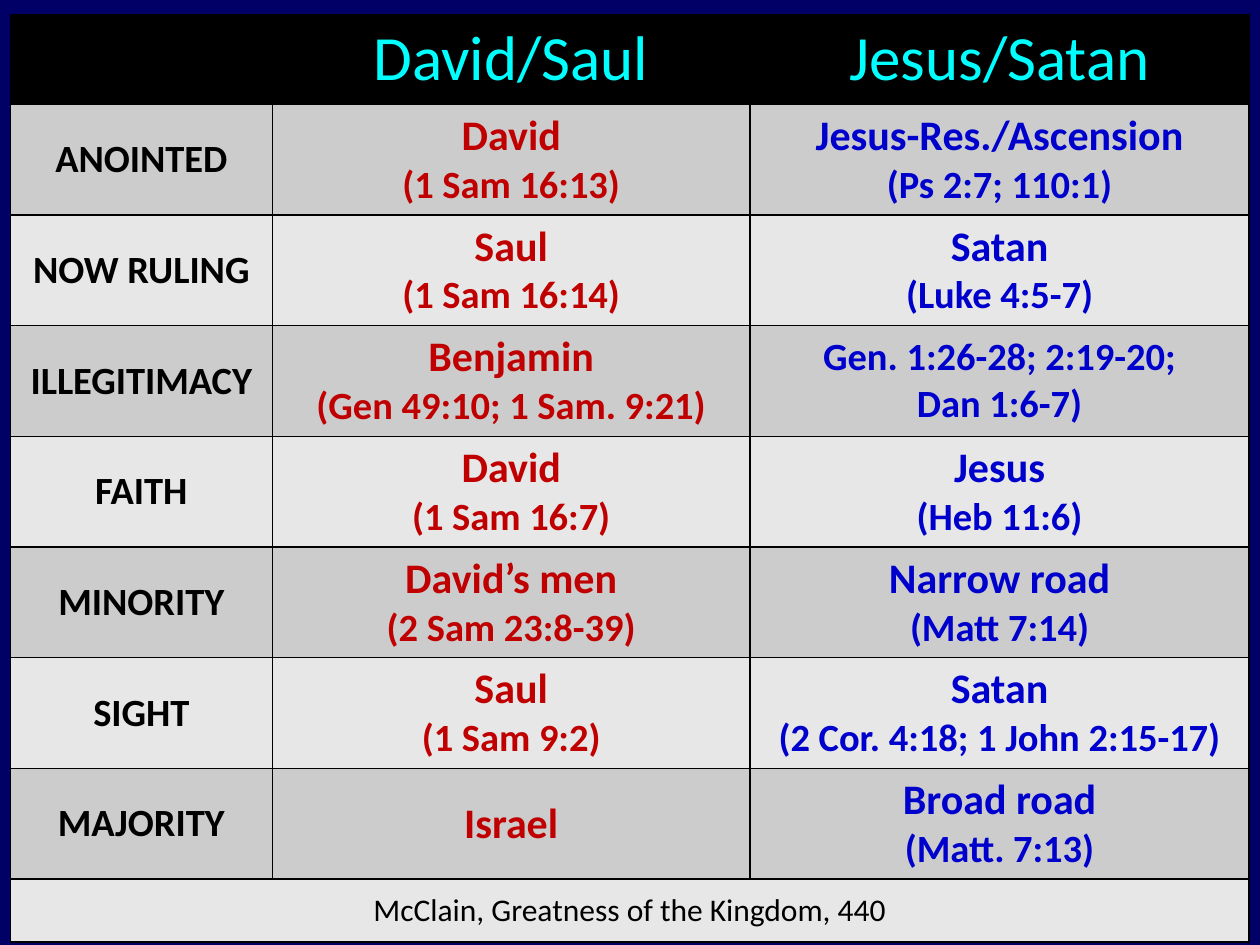
from dataclasses import dataclass

from lxml import etree
from pptx import Presentation
from pptx import util as u
from pptx.dml.color import RGBColor
from pptx.enum import text
from pptx.oxml.ns import qn


@dataclass(frozen=True)
class Theme:
    font: str = "Calibri"
    page: str = "000066"
    black: str = "000000"
    heading: str = "00FFFF"
    bands: tuple = ("CCCCCC", "E7E7E7")
    columns: tuple = ("000000", "C00000", "0000CC")
    heading_size: int = 36
    name_size: int = 24
    label_size: int = 22
    source_size: int = 18


theme = Theme()


def fill_cell(cell, fill, lines=(), color=theme.black, bold=True):
    """Style a cell and write its lines, given as (wording, size) pairs."""
    cell.vertical_anchor = text.MSO_ANCHOR.MIDDLE
    cell.fill.solid()
    cell.fill.fore_color.rgb = RGBColor.from_string(fill)

    # Borders come before the fill in the cell properties
    properties = cell._tc.get_or_add_tcPr()
    for place, side in enumerate(("lnL", "lnR", "lnT", "lnB")):
        border = etree.Element(qn(f"a:{side}"), w=str(u.Pt(1)))
        solid = etree.SubElement(border, qn("a:solidFill"))
        etree.SubElement(solid, qn("a:srgbClr"), val=theme.black)
        properties.insert(place, border)

    for index, (wording, size) in enumerate(lines):
        frame = cell.text_frame
        para = frame.paragraphs[0] if index == 0 else frame.add_paragraph()
        para.text = wording
        para.alignment = text.PP_ALIGN.CENTER
        para.font.name = theme.font
        para.font.size = u.Pt(size)
        para.font.bold = bold
        para.font.color.rgb = RGBColor.from_string(color)


headings = ("", "David/Saul", "Jesus/Satan")
# Label, then the name and reference for each column
comparisons = (
    ("ANOINTED", ("David", "(1 Sam 16:13)"), ("Jesus-Res./Ascension", "(Ps 2:7; 110:1)")),
    ("NOW RULING", ("Saul", "(1 Sam 16:14)"), ("Satan", "(Luke 4:5-7)")),
    ("ILLEGITIMACY", ("Benjamin", "(Gen 49:10; 1 Sam. 9:21)"),
     ("Gen. 1:26-28; 2:19-20;", "Dan 1:6-7)")),
    ("FAITH", ("David", "(1 Sam 16:7)"), ("Jesus", "(Heb 11:6)")),
    ("MINORITY", ("David’s men", "(2 Sam 23:8-39)"), ("Narrow road", "(Matt 7:14)")),
    ("SIGHT", ("Saul", "(1 Sam 9:2)"), ("Satan", "(2 Cor. 4:18; 1 John 2:15-17)")),
    ("MAJORITY", ("Israel",), ("Broad road", "(Matt. 7:13)")),
)
column_widths = (5.28, 9.63, 10.06)
row_heights = (1.78, *[2.21] * len(comparisons), 1.27)

# Page
deck = Presentation()
deck.slide_width, deck.slide_height = u.Cm(25.4), u.Cm(19.05)
page = deck.slides.add_slide(deck.slide_layouts[6])
page.background.fill.solid()
page.background.fill.fore_color.rgb = RGBColor.from_string(theme.page)

# Table grid
table = page.shapes.add_table(
    len(row_heights), len(column_widths), u.Cm(0.21), u.Cm(0.29),
    u.Cm(sum(column_widths)), u.Cm(sum(row_heights))).table
for column, width in zip(table.columns, column_widths):
    column.width = u.Cm(width)
for row, height in zip(table.rows, row_heights):
    row.height = u.Cm(height)

# Heading row
for cell, heading in zip(table.rows[0].cells, headings):
    lines = [(heading, theme.heading_size)] if heading else []
    fill_cell(cell, theme.black, lines, theme.heading, bold=False)

# Comparison rows
for number, (label, *entries) in enumerate(comparisons, start=1):
    band = theme.bands[(number - 1) % 2]
    fill_cell(table.cell(number, 0), band, [(label, theme.label_size)], theme.columns[0])
    for column, (name, *references) in enumerate(entries, start=1):
        # A first line that is itself a reference takes the smaller size
        size = theme.label_size if name.startswith("Gen.") else theme.name_size
        lines = [(name, size)] + [(ref, theme.label_size) for ref in references]
        fill_cell(table.cell(number, column), band, lines, theme.columns[column])

# Source row
last = len(row_heights) - 1
table.cell(last, 0).merge(table.cell(last, 2))
for cell in table.rows[last].cells:
    wording = "" if cell.is_spanned else "McClain, Greatness of the Kingdom, 440"
    lines = [(wording, theme.source_size)] if wording else []
    fill_cell(cell, theme.bands[1], lines, bold=False)

deck.save("out.pptx")
